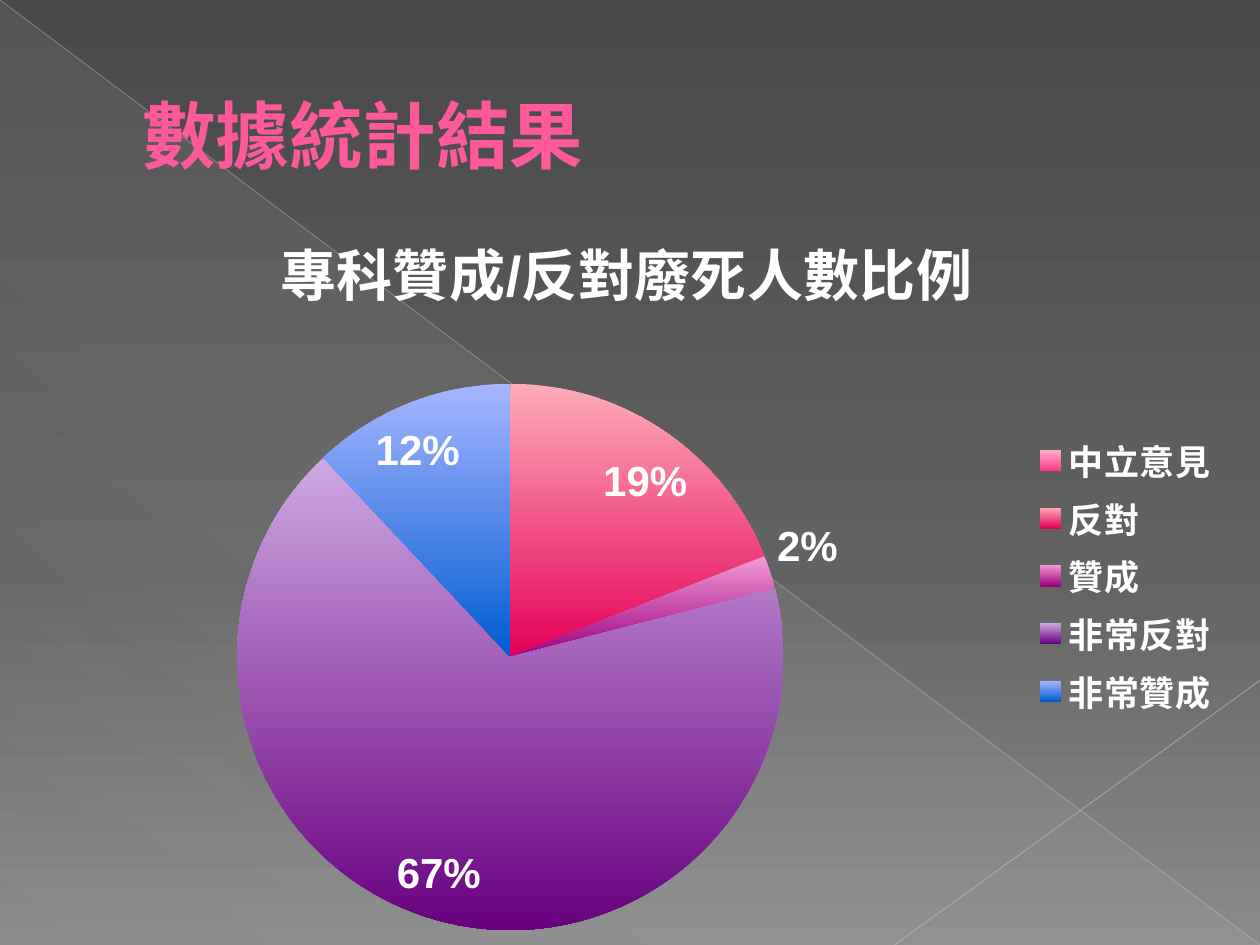
from lxml import etree
from pptx import Presentation, util as u
from pptx.chart.data import CategoryChartData
from pptx.dml.color import RGBColor
from pptx.enum import chart as c, shapes, text
from pptx.oxml import parse_xml
from pptx.oxml.ns import nsdecls, qn

COLUMNS, ROWS = 10, 7.5  # grid of one-inch cells
FONT = "Arial"
COLORS = {"title": "FF599C", "text": "FFFFFF", "veil": "D2D2D2", "line": "C0C0C0"}
BACKGROUND = [(0, "494949", 100), (60, "626262", 100), (100, "8B8B8B", 100)]
# Category, share in percent, light and dark end of the slice's gradient
SLICES = [
    ("中立意見", None, "FFB0CC", "FF388C"),
    ("反對", 19, "FFADB8", "E40059"),
    ("贊成", 2, "F29AD6", "9C007F"),
    ("非常反對", 67, "CFA8E2", "68007F"),
    ("非常贊成", 12, "A6B6FF", "005BD3"),
]


def grid(column, row, columns, rows):
    """Turn grid columns and rows into a box in EMU."""
    return tuple(u.Inches(length) for length in (column, row, columns, rows))


def style_font(font, size, color):
    font.name, font.size, font.bold = FONT, u.Pt(size), True
    font.color.rgb = RGBColor.from_string(color)


def set_gradient(fill, stops, angle=90):
    """Fill with (position %, colour, opacity %) stops, angle clockwise."""
    fill.gradient()
    fill.gradient_angle = 360 - angle
    stop_list = fill._xPr.find(qn("a:gradFill")).find(qn("a:gsLst"))
    for stop in list(stop_list):
        stop_list.remove(stop)
    for position, color, opacity in stops:
        stop_list.append(parse_xml(
            f'<a:gs {nsdecls("a")} pos="{position * 1000}"><a:srgbClr val="{color}">'
            f'<a:alpha val="{opacity * 1000}"/></a:srgbClr></a:gs>'))


def add_backdrop(slide, box):
    left, top, width, height = box
    set_gradient(slide.background.fill, BACKGROUND)
    # Pale corner triangle
    triangle = slide.shapes.add_shape(shapes.MSO_SHAPE.RIGHT_TRIANGLE, *box)
    triangle.shadow.inherit = False
    triangle.line.fill.background()
    veil = COLORS["veil"]
    set_gradient(triangle.fill, [(0, veil, 10), (70, veil, 8), (100, veil, 1)], 133)
    # Crossing diagonals: start x, start y, end x, end y, opacity
    for x1, y1, x2, y2, opacity in [(0, 0, 1, 1, 35), (1, 0.72, 0.71, 1, 45)]:
        line = slide.shapes.add_connector(
            shapes.MSO_CONNECTOR.STRAIGHT, int(left + x1 * width), int(top + y1 * height),
            int(left + x2 * width), int(top + y2 * height))
        line.line.width = u.Pt(0.75)
        line.line.color.rgb = RGBColor.from_string(COLORS["line"])
        properties = line._element.spPr
        color = next(properties.iter(qn("a:srgbClr")))
        etree.SubElement(color, qn("a:alpha")).set("val", str(opacity * 1000))
        etree.SubElement(properties, qn("a:effectLst"))


def add_title(slide, box):
    title = slide.shapes.title
    slide.shapes._spTree.append(title._element)  # in front of the backdrop
    title.left, title.top, title.width, title.height = box
    frame = title.text_frame
    frame.text = "數據統計結果"
    frame.auto_size = text.MSO_AUTO_SIZE.NONE
    frame.vertical_anchor = text.MSO_ANCHOR.MIDDLE
    frame.margin_left = frame.margin_right = u.Inches(0.1)
    frame.margin_top = frame.margin_bottom = u.Inches(0.1)
    paragraph = frame.paragraphs[0]
    paragraph.alignment = text.PP_ALIGN.LEFT
    paragraph._p.get_or_add_pPr().set("marL", str(u.Inches(0.53)))
    style_font(paragraph.font, 42, COLORS["title"])


def set_layout(part, x, y, width=None, height=None, inner=False):
    """Place a chart part by shares of the chart's box."""
    target = '<c:layoutTarget val="inner"/>' if inner else ""
    size = f'<c:w val="{width}"/><c:h val="{height}"/>' if width else ""
    layout = parse_xml(
        f'<c:layout {nsdecls("c")}><c:manualLayout>{target}<c:xMode val="edge"/>'
        f'<c:yMode val="edge"/><c:x val="{x}"/><c:y val="{y}"/>{size}'
        f'</c:manualLayout></c:layout>')
    for old in part.findall(qn("c:layout")):
        part.remove(old)
    before = part.find(qn("c:legendPos"))
    if before is None:
        before = part.find(qn("c:tx"))
    if before is None:
        part.insert(0, layout)
    else:
        before.addnext(layout)


def add_pie(slide, box):
    data = CategoryChartData()
    data.categories = [name for name, *_ in SLICES]
    data.add_series("Series 1", [value for _, value, *_ in SLICES])
    chart = slide.shapes.add_chart(c.XL_CHART_TYPE.PIE, *box, data).chart
    chart.font.name, chart.font.size = FONT, u.Pt(10)

    # Heading
    chart.has_title = True
    heading = chart.chart_title.text_frame
    heading.text = "專科贊成/反對廢死人數比例"
    style_font(heading.paragraphs[0].font, 32, COLORS["text"])
    set_layout(chart.chart_title._element, 0.18, 0.01)

    # Legend
    chart.has_legend = True
    chart.legend.position = c.XL_LEGEND_POSITION.RIGHT
    chart.legend.include_in_layout = False
    style_font(chart.legend.font, 20, COLORS["text"])
    set_layout(chart.legend._element, 0.83, 0.3, 0.16, 0.4)

    # Slices and their percentages
    plot = chart.plots[0]
    plot.vary_by_categories = True
    set_layout(chart._chartSpace.chart.plotArea, 0.15, 0.24, 0.47, 0.74, inner=True)
    for index, (_, _, light, dark) in enumerate(SLICES):
        point = plot.series[0].points[index]
        set_gradient(point.format.fill, [(0, light, 100), (100, dark, 100)])
        point.format.line.fill.background()
    plot.has_data_labels = True
    labels = plot.data_labels
    labels.show_percentage, labels.show_value = True, False
    labels.number_format, labels.number_format_is_linked = "0%", False
    labels.position = c.XL_LABEL_POSITION.BEST_FIT
    style_font(labels.font, 24, COLORS["text"])


def main():
    presentation = Presentation()
    presentation.slide_width = u.Inches(COLUMNS)
    presentation.slide_height = u.Inches(ROWS)
    slide = presentation.slides.add_slide(presentation.slide_layouts[5])
    add_backdrop(slide, grid(0, 0, COLUMNS, ROWS))
    add_title(slide, grid(0.5, 0.3, 9, 1.53))
    add_pie(slide, grid(0.47, 1.64, 9.3, 5.86))
    presentation.save("out.pptx")


if __name__ == "__main__":
    main()
